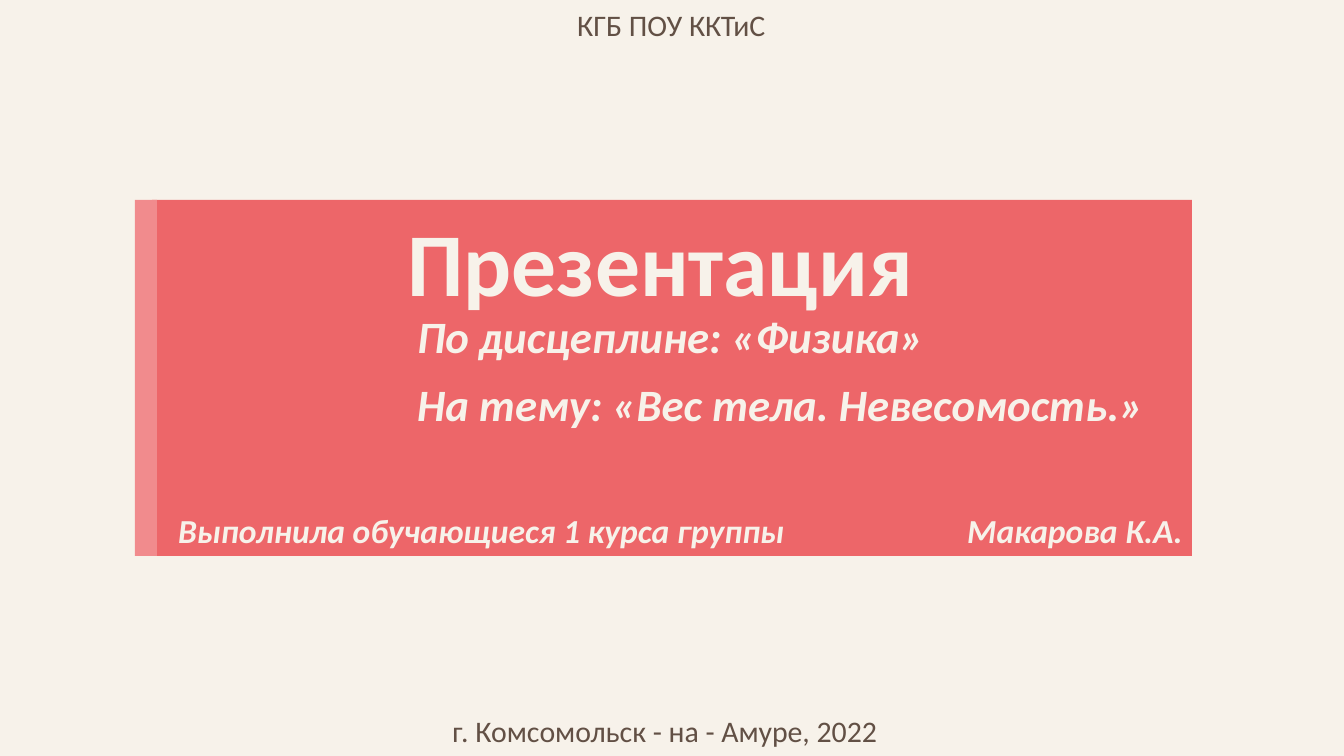
"""Build the title slide of a physics presentation."""
from pptx import Presentation
from pptx.dml.color import RGBColor as RGB
from pptx.enum.shapes import MSO_SHAPE as Shape
from pptx.enum.text import MSO_ANCHOR as Anchor, MSO_AUTO_SIZE as Auto, PP_ALIGN as Align
from pptx.util import Pt

PX = 914400 / 134.4
CREAM, BROWN = "F7F2EA", "625045"


def paint(fill, color):
    fill.solid()
    fill.fore_color.rgb = RGB.from_string(color)


def write(box, text, look):
    frame = box.text_frame
    frame.word_wrap = False
    frame.auto_size = Auto.NONE
    frame.vertical_anchor = Anchor.TOP
    para = frame.paragraphs[0]
    para.text = text
    para.alignment = Align.LEFT
    for key, val in look.items():
        if key == "color":
            para.font.color.rgb = RGB.from_string(val)
        else:
            setattr(para.font, key, val)


deck = Presentation()
deck.slide_width, deck.slide_height = round(1344 * PX), round(756 * PX)
slide = deck.slides.add_slide(deck.slide_layouts[5])
paint(slide.background.fill, CREAM)
shapes = slide.shapes

for left, width, color in [(152, 1040, "ED6669"), (135, 22, "F18B8D")]:
    spot = [round(n * PX) for n in (left, 200, width, 356)]
    bar = shapes.add_shape(Shape.RECTANGLE, *spot)
    bar.shadow.inherit = False
    paint(bar.fill, color)
    bar.line.fill.background()

title = shapes.title
tree = title._element.getparent()
tree.append(title._element)
title.left, title.top, title.width, title.height = [
    round(n * PX) for n in (394, 200, 535, 122)]
base = {"name": "Calibri", "color": CREAM, "bold": True}
write(title, "Презентация", base | {"size": Pt(48)})

topic = base | {"size": Pt(24), "italic": True}
credit = topic | {"size": Pt(18)}
plain = {"name": "Calibri", "color": BROWN, "size": Pt(16)}
lines = [
    ("По дисцеплине: «Физика»", 404, 302, 533, 67, topic),
    ("На тему: «Вес тела. Невесомость.»", 404, 370, 753, 67, topic),
    ("Выполнила обучающиеся 1 курса группы", 165, 503, 640, 54, credit),
    ("Макарова К.А.", 954, 503, 242, 54, credit),
    ("КГБ ПОУ ККТиС", 564, 0, 226, 50, plain),
    ("г. Комсомольск - на - Амуре, 2022", 439, 706, 477, 50, plain),
]
for text, left, top, width, height, look in lines:
    spot = [round(n * PX) for n in (left, top, width, height)]
    write(shapes.add_textbox(*spot), text, look)

deck.save("out.pptx")
